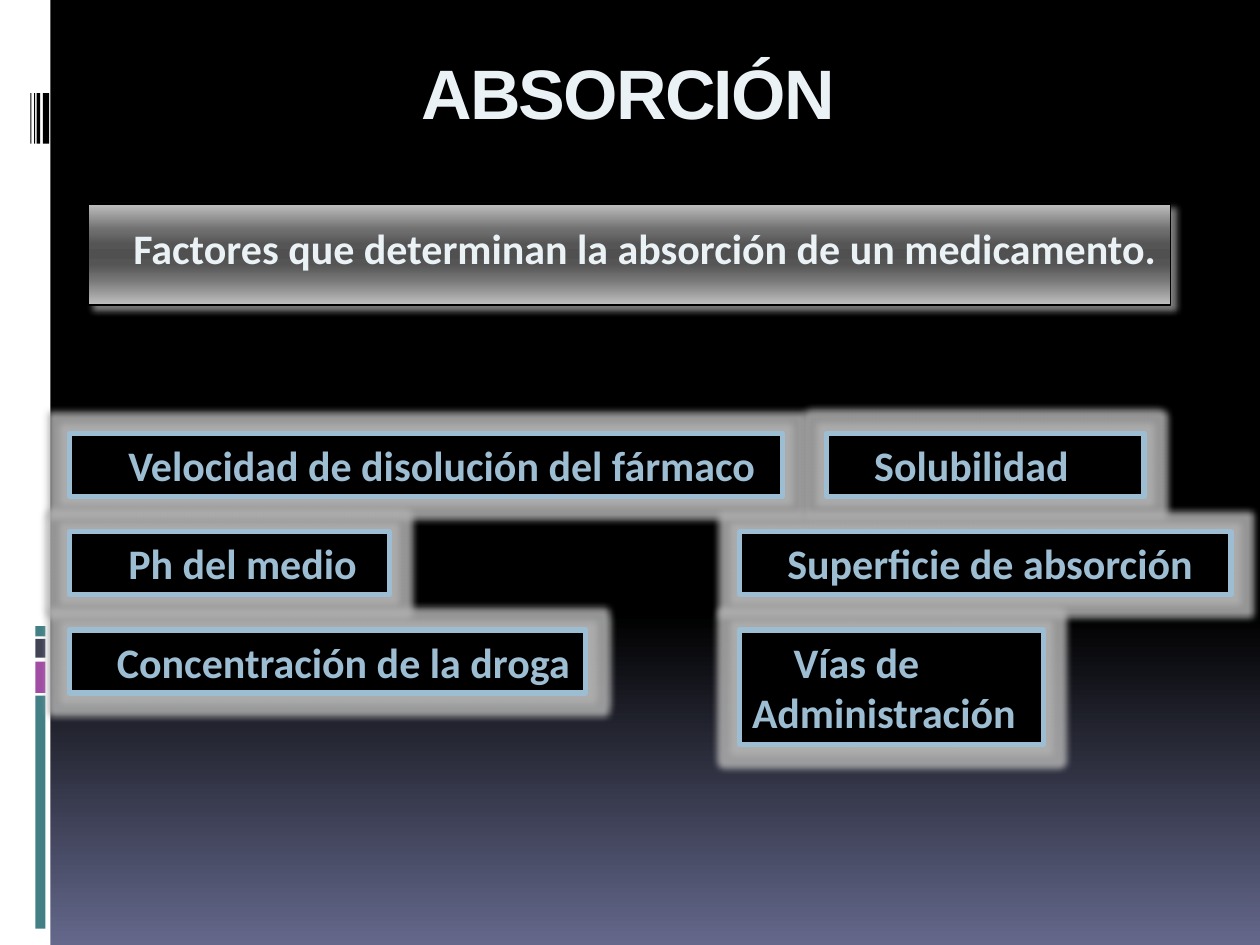
from lxml.etree import SubElement
from pptx import Presentation
from pptx.dml.color import RGBColor
from pptx.enum.shapes import MSO_SHAPE
from pptx.enum.text import MSO_ANCHOR, PP_ALIGN
from pptx.oxml.ns import qn
from pptx.util import Inches, Pt

WIDTH, HEIGHT = 10, 7.5
PALE, SKY, BLACK = "EBF2F6", "9DBDD2", "000000"
TEAL, PURPLE, SLATE = "438086", "A04DA3", "424456"

NIGHT_SKY = [(0, BLACK), (65, BLACK), (100, "64688B")]
STEEL = [(0, "C0C0C0"), (25, "707070"), (40, "555555"), (50, "505050"),
         (60, "555555"), (75, "767676"), (100, "C0C0C0")]

# Factor grid: columns and rows in inches
LEFT, RIGHT, FAR_RIGHT = 0.55, 5.87, 6.56
ROWS = [3.44 + 0.78 * row for row in range(3)]
ROW_HEIGHT = 0.5
FACTORS = [  # text, column, row, width, height, first-line indent
    ("Velocidad de disolución del fármaco", LEFT, 0, 5.66, ROW_HEIGHT, 0.37),
    ("Ph del medio", LEFT, 1, 2.54, ROW_HEIGHT, 0.37),
    ("Solubilidad", FAR_RIGHT, 0, 2.52, ROW_HEIGHT, 0.28),
    ("Concentración de la droga", LEFT, 2, 4.1, ROW_HEIGHT, 0.28),
    ("Superficie de absorción", RIGHT, 1, 3.9, ROW_HEIGHT, 0.28),
    ("Vías de Administración", RIGHT, 2, 2.41, 0.91, 0.33),
]


def color(hex_text):
    return RGBColor.from_string(hex_text)


def set_gradient(fill, owner, stops):
    """Fill downwards with (percent, colour) stops; owner holds the fill."""
    fill.gradient()
    fill.gradient_angle = 270
    stop_list = owner.find(".//" + qn("a:gsLst"))
    for old_stop in list(stop_list):
        stop_list.remove(old_stop)
    for percent, hex_text in stops:
        stop = SubElement(stop_list, qn("a:gs"), pos=str(percent * 1000))
        SubElement(stop, qn("a:srgbClr"), val=hex_text)


def add_halo(shape, kind, hex_text, alpha, **lengths):
    """Add a glow or an outer shadow to the shape's empty effect list."""
    effects = shape._element.spPr.find(qn("a:effectLst"))
    attributes = {name: str(value) for name, value in lengths.items()}
    halo = SubElement(effects, qn("a:" + kind), attributes)
    tint = SubElement(halo, qn("a:srgbClr"), val=hex_text)
    SubElement(tint, qn("a:alpha"), val=str(alpha * 1000))


def add_block(slide, left, top, width, height, fill=None, line=None, line_width=1):
    block = slide.shapes.add_shape(
        MSO_SHAPE.RECTANGLE, *map(Inches, (left, top, width, height)))
    block.shadow.inherit = False
    if fill:
        block.fill.solid()
        block.fill.fore_color.rgb = color(fill)
    if line:
        block.line.color.rgb = color(line)
        block.line.width = Pt(line_width)
    else:
        block.line.fill.background()
    return block


def write(shape, text, hex_text, font="Calibri", size=24, align=PP_ALIGN.LEFT,
          indent=0, top_margin=0.05):
    frame = shape.text_frame
    frame_format = {"word_wrap": True, "vertical_anchor": MSO_ANCHOR.TOP,
                    "margin_top": Inches(top_margin), "margin_right": Inches(0.05)}
    for name, value in frame_format.items():
        setattr(frame, name, value)
    paragraph = frame.paragraphs[0]
    paragraph.alignment = align
    paragraph._p.get_or_add_pPr().set("indent", str(Inches(indent)))
    run = paragraph.add_run()
    run.text = text
    for name, value in {"name": font, "size": Pt(size), "bold": True}.items():
        setattr(run.font, name, value)
    run.font.color.rgb = color(hex_text)
    return run


def add_side_strip(slide):
    add_block(slide, 0, 0, 0.4, HEIGHT, "FFFFFF")
    for top, height, hex_text in [(5.52, 1.85, TEAL), (5.25, 0.25, PURPLE),
                                  (5.07, 0.15, SLATE), (4.97, 0.08, TEAL)]:
        add_block(slide, 0.28, top, 0.08, height, hex_text)
    for left, width in [(0.34, 0.05), (0.29, 0.03), (0.27, 0.01), (0.24, 0.01)]:
        add_block(slide, left, 0.74, width, 0.4, BLACK)


def add_title(slide, text):
    title = slide.shapes.add_textbox(*map(Inches, (0.75, 0.28, 8.42, 1)))
    run = write(title, text, PALE, "Arial", 40, PP_ALIGN.CENTER, top_margin=0.11)
    run.font._element.set("spc", "-100")


def add_banner(slide, text):
    banner = add_block(slide, 0.7, 1.62, 8.59, 0.8, line=BLACK, line_width=0.94)
    set_gradient(banner.fill, banner._element, STEEL)
    add_halo(banner, "outerShdw", "A0A0A0", 80, blurRad=Pt(4), dist=Pt(3), dir=2700000)
    write(banner, text, PALE, indent=0.26, top_margin=0.15)


def add_factor(slide, text, left, row, width, height, indent):
    factor = add_block(slide, left, ROWS[row], width, height, BLACK, SKY, 3)
    add_halo(factor, "glow", "B0B0B0", 85, rad=Pt(8))
    write(factor, text, SKY, indent=indent)


def main():
    deck = Presentation()
    deck.slide_width, deck.slide_height = Inches(WIDTH), Inches(HEIGHT)
    slide = deck.slides.add_slide(deck.slide_layouts[6])
    set_gradient(slide.background.fill, slide._element, NIGHT_SKY)
    add_side_strip(slide)
    add_title(slide, "ABSORCIÓN")
    add_banner(slide, "Factores que determinan la absorción de un medicamento.")
    for factor in FACTORS:
        add_factor(slide, *factor)
    deck.save("out.pptx")


if __name__ == "__main__":
    main()
